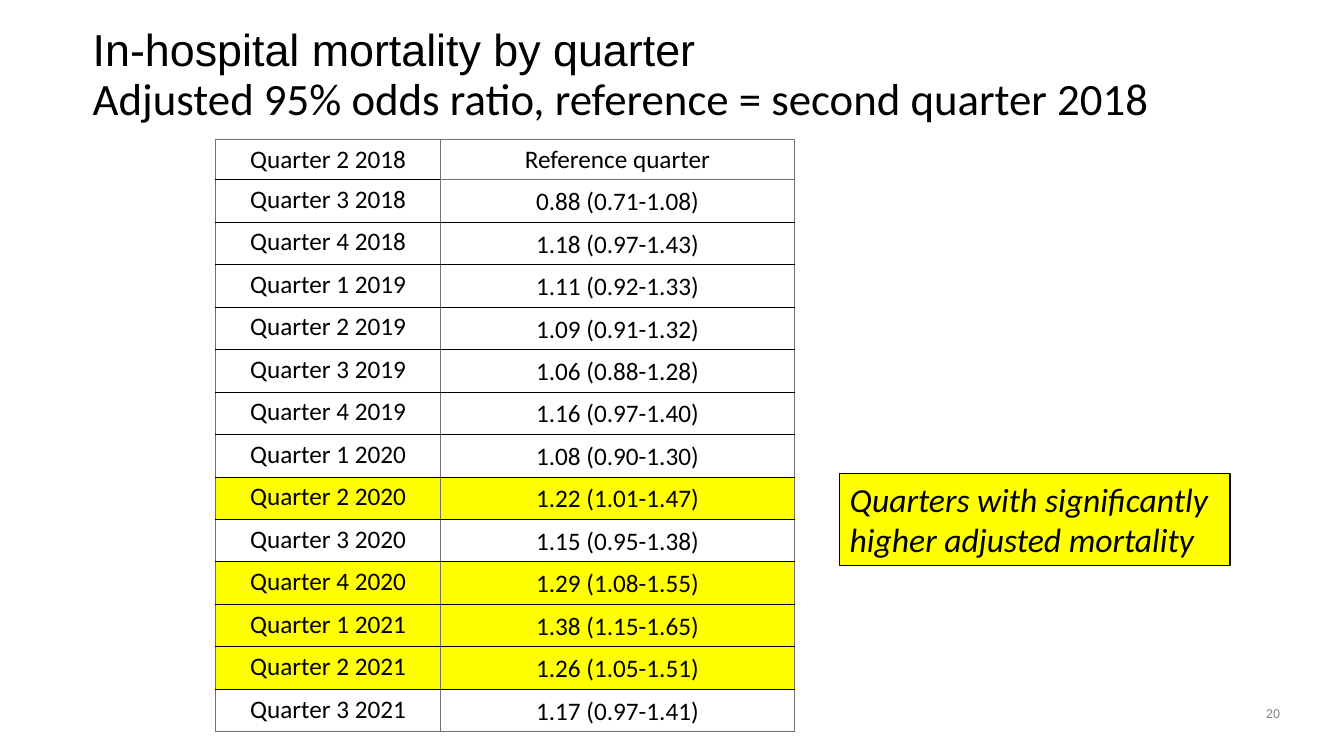
from dataclasses import dataclass
from typing import NamedTuple

from lxml.etree import SubElement
from pptx import Presentation
from pptx.dml.color import RGBColor
from pptx.enum.shapes import MSO_SHAPE
from pptx.enum.text import MSO_ANCHOR, PP_ALIGN
from pptx.oxml.ns import qn
from pptx.util import Inches, Pt


@dataclass(frozen=True)
class Theme:
    ink: str = "000000"
    rule: str = "767171"
    muted: str = "808080"
    highlight: str = "FFFF00"
    heading_font: str = "Arial"
    body_font: str = "Calibri"
    title_size: int = 32
    note_size: int = 24
    cell_size: int = 18
    number_size: int = 9


class Area(NamedTuple):
    left: float
    top: float
    width: float
    height: float


class Estimate(NamedTuple):
    ratio: float
    low: float
    high: float


class Border(NamedTuple):
    color: str
    points: float


THEME = Theme()
SLIDE_WIDTH, SLIDE_HEIGHT = Inches(13.33), Inches(7.5)

TITLE_AREA = Area(6.9, 5.33, 86.25, 9.6)
TABLE_AREA = Area(16.05, 18.4, 43.06, 67.2)
NOTE_AREA = Area(62.48, 62.67, 29.03, 12.13)
NUMBER_AREA = Area(93.15, 92.67, 3.15, 3.47)
COLUMN_SHARES = (16.73, 26.33)

RULE = Border(THEME.rule, 1)
HAIRLINE = Border(THEME.ink, 0.25)

ESTIMATES = (
    Estimate(0.88, 0.71, 1.08),
    Estimate(1.18, 0.97, 1.43),
    Estimate(1.11, 0.92, 1.33),
    Estimate(1.09, 0.91, 1.32),
    Estimate(1.06, 0.88, 1.28),
    Estimate(1.16, 0.97, 1.40),
    Estimate(1.08, 0.90, 1.30),
    Estimate(1.22, 1.01, 1.47),
    Estimate(1.15, 0.95, 1.38),
    Estimate(1.29, 1.08, 1.55),
    Estimate(1.38, 1.15, 1.65),
    Estimate(1.26, 1.05, 1.51),
    Estimate(1.17, 0.97, 1.41),
)


def across(share: float) -> int:
    return round(SLIDE_WIDTH * share / 100)


def down(share: float) -> int:
    return round(SLIDE_HEIGHT * share / 100)


def bounds(area: Area) -> tuple[int, int, int, int]:
    return across(area.left), down(area.top), across(area.width), down(area.height)


def write(para, text: str, *, size: float, font: str = THEME.body_font,
          color: str = THEME.ink, italic: bool = False,
          align=PP_ALIGN.LEFT, spacing: float = 1.0) -> None:
    para.alignment = align
    para.line_spacing = spacing
    span = para.add_run()
    span.text = text
    span.font.size = Pt(size)
    span.font.name = font
    span.font.color.rgb = RGBColor.from_string(color)
    span.font.italic = italic


def set_borders(cell, **borders: Border) -> None:
    properties = cell._tc.get_or_add_tcPr()
    for position, side in enumerate(("left", "right", "top", "bottom")):
        border = borders[side]
        line = SubElement(properties, qn(f"a:ln{side[0].upper()}"),
                          w=str(Pt(border.points)))
        fill = SubElement(line, qn("a:solidFill"))
        SubElement(fill, qn("a:srgbClr"), val=border.color)
        properties.insert(position, line)


def add_title(page) -> None:
    title = page.shapes.title
    title.left, title.top, title.width, title.height = bounds(TITLE_AREA)
    frame = title.text_frame
    frame.word_wrap = True
    frame.vertical_anchor = MSO_ANCHOR.MIDDLE
    frame.margin_left = frame.margin_right = frame.margin_top = frame.margin_bottom = 0
    para = frame.paragraphs[0]
    write(para, "In-hospital mortality by quarter", size=THEME.title_size,
          font=THEME.heading_font, spacing=0.9)
    para.add_line_break()
    write(para, "Adjusted 95% odds ratio, reference = second quarter 2018",
          size=THEME.title_size, spacing=0.9)


def add_odds_table(page) -> None:
    rows = (None, *ESTIMATES)
    table = page.shapes.add_table(len(rows), len(COLUMN_SHARES),
                                  *bounds(TABLE_AREA)).table
    table.first_row = table.horz_banding = False
    for column, share in zip(table.columns, COLUMN_SHARES):
        column.width = across(share)
    last = len(rows) - 1
    for index, estimate in enumerate(rows):
        years, quarter = divmod(index + 1, 4)
        label = f"Quarter {quarter + 1} {2018 + years}"
        value = "Reference quarter" if estimate is None else (
            f"{estimate.ratio:.2f} ({estimate.low:.2f}-{estimate.high:.2f})")
        significant = estimate is not None and estimate.low > 1
        for column, text in enumerate((label, value)):
            cell = table.cell(index, column)
            is_value = column == 1
            spacing = 1.07 if is_value and estimate else 1.0
            write(cell.text_frame.paragraphs[0], text, size=THEME.cell_size,
                  align=PP_ALIGN.CENTER, spacing=spacing)
            if significant:
                cell.fill.solid()
                cell.fill.fore_color.rgb = RGBColor.from_string(THEME.highlight)
            else:
                cell.fill.background()
            top_ruled = index == 0 or (is_value and index == 1)
            bottom_ruled = index == last or (is_value and index == 0)
            set_borders(cell, left=RULE, right=RULE,
                        top=RULE if top_ruled else HAIRLINE,
                        bottom=RULE if bottom_ruled else HAIRLINE)


def add_note(page) -> None:
    box = page.shapes.add_shape(MSO_SHAPE.RECTANGLE, *bounds(NOTE_AREA))
    box.shadow.inherit = False
    box.fill.solid()
    box.fill.fore_color.rgb = RGBColor.from_string(THEME.highlight)
    box.line.color.rgb = RGBColor.from_string(THEME.ink)
    box.line.width = Pt(1)
    frame = box.text_frame
    frame.word_wrap = False
    frame.vertical_anchor = MSO_ANCHOR.TOP
    write(frame.paragraphs[0], "Quarters with significantly",
          size=THEME.note_size, italic=True)
    write(frame.add_paragraph(), "higher adjusted mortality",
          size=THEME.note_size, italic=True)


def add_page_number(page) -> None:
    box = page.shapes.add_textbox(*bounds(NUMBER_AREA))
    box.text_frame.word_wrap = True
    write(box.text_frame.paragraphs[0], "20", size=THEME.number_size,
          font=THEME.heading_font, color=THEME.muted, align=PP_ALIGN.CENTER)


def main() -> None:
    deck = Presentation()
    deck.slide_width, deck.slide_height = SLIDE_WIDTH, SLIDE_HEIGHT
    page = deck.slides.add_slide(deck.slide_layouts.get_by_name("Title Only"))
    add_title(page)
    add_page_number(page)
    add_odds_table(page)
    add_note(page)
    deck.save("out.pptx")


if __name__ == "__main__":
    main()
